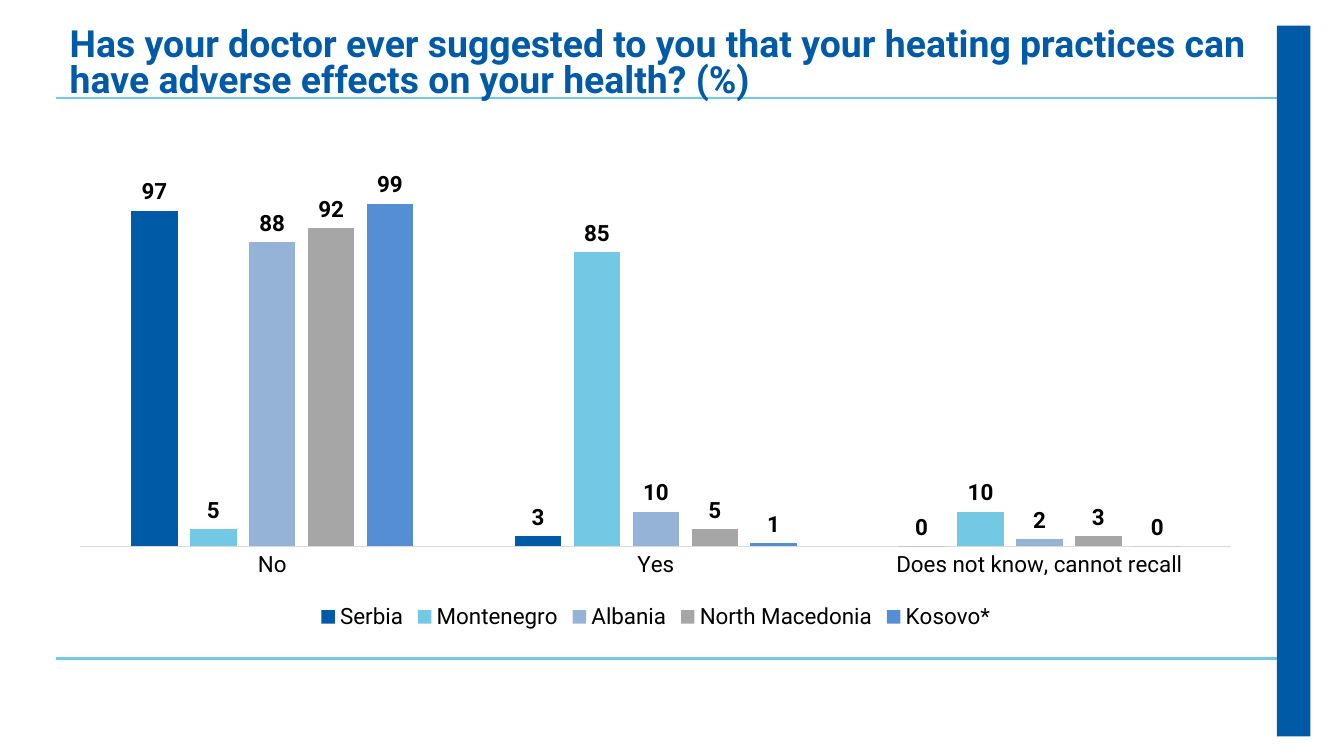
from lxml.etree import SubElement
from pptx import Presentation
from pptx.chart.data import CategoryChartData
from pptx.dml.color import RGBColor
from pptx.enum.chart import XL_CHART_TYPE, XL_LABEL_POSITION, XL_LEGEND_POSITION, XL_TICK_MARK
from pptx.enum.shapes import MSO_CONNECTOR, MSO_SHAPE
from pptx.enum.text import MSO_ANCHOR
from pptx.oxml.ns import qn
from pptx.util import Inches, Pt

BLUE = "005AA6"
SKY = "73C9E4"
FACE = "Roboto"
TITLE = ("Has your doctor ever suggested to you that your heating practices can "
         "have adverse effects on your health? (%)")
CATS = ["No", "Yes", "Does not know, cannot recall"]
SERIES = [
    ("Serbia", BLUE, (97, 3, 0)),
    ("Montenegro", SKY, (5, 85, 10)),
    ("Albania", "95B3D7", (88, 10, 2)),
    ("North Macedonia", "A6A6A6", (92, 5, 3)),
    ("Kosovo*", "558ED5", (99, 1, 0)),
]


def paint(fmt, color):
    fmt.solid()
    fmt.fore_color.rgb = RGBColor.from_string(color)


def style(font, size, color="000000", bold=False):
    font.name = FACE
    font.size = Pt(size)
    font.bold = bold
    paint(font.fill, color)


def add_frame(slide, left, top, width, height):
    right = left + width
    for y in (top + 0.54, top + 4.71):
        rule = slide.shapes.add_connector(
            MSO_CONNECTOR.STRAIGHT, Inches(right), Inches(y), Inches(left), Inches(y))
        paint(rule.line.fill, SKY)
        rule.line.width = Pt(1.5)
        SubElement(rule._element.spPr, qn("a:effectLst"))
    bar = slide.shapes.add_shape(
        MSO_SHAPE.RECTANGLE, Inches(right - 0.21), Inches(top), Inches(0.25), Inches(height))
    paint(bar.fill, BLUE)
    bar.line.fill.background()
    bar.shadow.inherit = False


def add_title(slide, left, top, width, height):
    box = slide.shapes.add_textbox(Inches(left), Inches(top), Inches(width), Inches(height))
    frame = box.text_frame
    frame.word_wrap = True
    frame.vertical_anchor = MSO_ANCHOR.MIDDLE
    frame.text = TITLE
    para = frame.paragraphs[0]
    para.line_spacing = 0.8
    style(para.runs[0].font, 20, BLUE, True)


def add_bars(slide, left, top, width, height):
    data = CategoryChartData()
    data.categories = CATS
    for name, color, vals in SERIES:
        data.add_series(name, vals)
    chart = slide.shapes.add_chart(
        XL_CHART_TYPE.COLUMN_CLUSTERED, Inches(left), Inches(top),
        Inches(width), Inches(height), data).chart
    style(chart.font, 12, bold=True)
    chart.has_title = False

    chart.has_legend = True
    chart.legend.position = XL_LEGEND_POSITION.BOTTOM
    chart.legend.include_in_layout = False
    style(chart.legend.font, 12)

    axis = chart.category_axis
    axis.major_tick_mark = XL_TICK_MARK.NONE
    style(axis.tick_labels.font, 12)
    paint(axis.format.line.fill, "D9D9D9")
    axis.format.line.width = Pt(0.75)

    scale = chart.value_axis
    scale.visible = False
    scale.has_major_gridlines = False
    scale.minimum_scale = 0
    scale.maximum_scale = 120

    plot = chart.plots[0]
    plot.gap_width = 219
    plot.overlap = -27
    plot.vary_by_categories = False
    for bars, (name, color, vals) in zip(plot.series, SERIES):
        paint(bars.format.fill, color)
        labels = bars.data_labels
        labels.show_value = True
        labels.position = XL_LABEL_POSITION.OUTSIDE_END
        style(labels.font, 12, bold=True)


def main():
    deck = Presentation()
    deck.slide_width = Inches(10)
    deck.slide_height = deck.slide_width * 9 // 16
    slide = deck.slides.add_slide(deck.slide_layouts[6])
    add_frame(slide, 0.42, 0.19, 9.29, 5.29)
    add_title(slide, 0.42, 0.23, 9.08, 0.5)
    add_bars(slide, 0.42, 0.9, 8.92, 3.83)
    deck.save("out.pptx")


if __name__ == "__main__":
    main()
